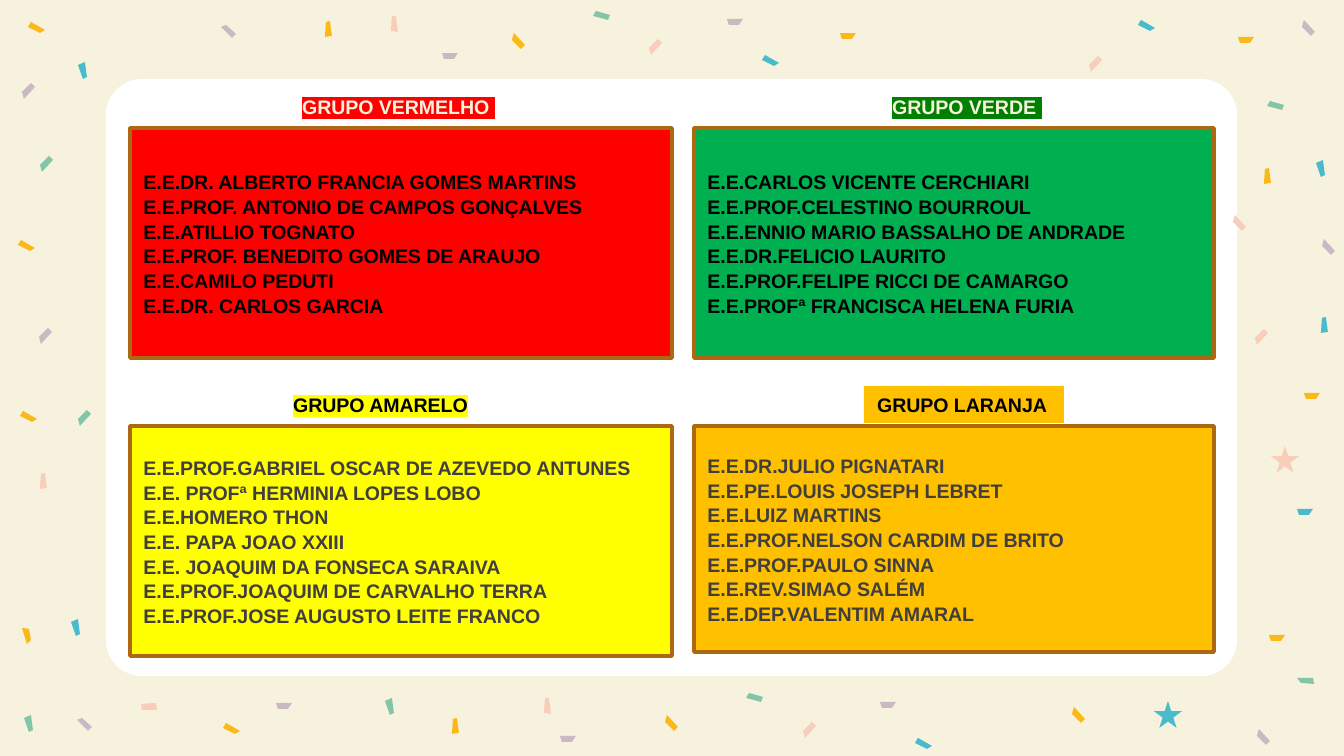
import pptx
import pptx.util
import pptx.dml.color
import pptx.enum.shapes
import pptx.enum.text
import pptx.oxml.ns
import lxml.etree

PX = 9144000 / 1344
SHAPE = pptx.enum.shapes.MSO_SHAPE
COLORS = {
    "cream": "F7F2DD", "white": "FFFFFF", "black": "000000", "gray": "413E3E",
    "brown": "AF6812", "red": "FF0000", "green": "00B050", "dark_green": "008000",
    "yellow": "FFFF00", "orange": "FFC000", "lilac": "CAB8C5", "pink": "F8CEBB",
    "gold": "FAB919", "mint": "85C5A7", "blue": "4ABACD",
}

CONFETTI = [
    ([(0, 0), (16, 0), (12, 6), (2, 6)], {
        "lilac": [(560, 736), (276, 703), (880, 702), (442, 53), (727, 19)],
        "gold": [(1269, 635), (1304, 393), (840, 33), (1238, 37)],
        "blue": [(1297, 509)]}),
    ([(0, 5), (12, 11), (17, 8), (3, 0)], {
        "gold": [(223, 723), (20, 411), (18, 240), (28, 22)],
        "blue": [(915, 738), (762, 55), (1138, 20)]}),
    ([(9, 0), (0, 9), (2, 16), (13, 4)], {
        "lilac": [(39, 328), (22, 83)],
        "pink": [(803, 722), (1255, 329), (649, 39), (1089, 56)],
        "mint": [(78, 410), (40, 156)]}),
    ([(9, 16), (0, 7), (2, 0), (13, 12)], {
        "gold": [(665, 715), (1072, 707), (512, 33)],
        "lilac": [(1257, 729), (1322, 239), (1302, 20)],
        "pink": [(1233, 215)]}),
    ([(15, 9), (5, 0), (0, 2), (11, 13)], {"lilac": [(77, 718), (221, 25)]}),
    ([(0, 3), (5, 17), (9, 15), (7, 0)], {
        "mint": [(24, 715), (385, 698)],
        "blue": [(71, 619), (78, 62), (1316, 160)]}),
    ([(9, 12), (7, 1), (0, 0), (5, 16)], {"gold": [(22, 628)]}),
    ([(0, 15), (1, 0), (5, 0), (7, 16)], {"pink": [(544, 698), (391, 16)]}),
    ([(7, 15), (5, 0), (1, 1), (0, 16)], {
        "gold": [(452, 718), (325, 21), (1264, 168)],
        "pink": [(40, 473)], "blue": [(1321, 317)]}),
    ([(3, 0), (17, 4), (15, 9), (0, 5)], {
        "mint": [(746, 693), (593, 11), (1267, 101)]}),
    ([(15, 0), (0, 1), (1, 7), (16, 7)], {"pink": [(141, 703)]}),
    ([(17, 6), (4, 5), (0, 0), (16, 0)], {"mint": [(1297, 678)]}),
]
STARS = [(1154, 701, "blue"), (1271, 446, "pink")]

GROUPS = [
    {"box": (130, 128, 542, 230), "fill": "red", "color": "black",
     "heading": {"text": "GRUPO VERMELHO ", "dx": 159, "width": 222,
                 "color": "cream", "highlight": "red"},
     "schools": ["E.E.DR. ALBERTO FRANCIA GOMES MARTINS",
                 "E.E.PROF. ANTONIO DE CAMPOS GONÇALVES",
                 "E.E.ATILLIO TOGNATO",
                 "E.E.PROF. BENEDITO GOMES DE ARAUJO",
                 "E.E.CAMILO PEDUTI",
                 "E.E.DR. CARLOS GARCIA"]},
    {"box": (694, 128, 520, 230), "fill": "green", "color": "black",
     "heading": {"text": "GRUPO VERDE ", "dx": 185, "width": 226,
                 "color": "cream", "highlight": "dark_green"},
     "schools": ["E.E.CARLOS VICENTE CERCHIARI",
                 "E.E.PROF.CELESTINO BOURROUL",
                 "E.E.ENNIO MARIO BASSALHO DE ANDRADE",
                 "E.E.DR.FELICIO LAURITO",
                 "E.E.PROF.FELIPE RICCI DE CAMARGO",
                 "E.E.PROFª FRANCISCA HELENA FURIA"]},
    {"box": (130, 426, 542, 230), "fill": "yellow", "color": "gray",
     "heading": {"text": "GRUPO AMARELO", "dx": 150, "width": 206,
                 "color": "black", "highlight": "yellow"},
     "schools": ["E.E.PROF.GABRIEL OSCAR DE AZEVEDO ANTUNES",
                 "E.E. PROFª HERMINIA LOPES LOBO",
                 "E.E.HOMERO THON",
                 "E.E. PAPA JOAO XXIII",
                 "E.E. JOAQUIM DA FONSECA SARAIVA",
                 "E.E.PROF.JOAQUIM DE CARVALHO TERRA",
                 "E.E.PROF.JOSE AUGUSTO LEITE FRANCO"]},
    {"box": (694, 426, 520, 226), "fill": "orange", "color": "gray",
     "heading": {"text": "GRUPO LARANJA", "dx": 170, "width": 200,
                 "color": "black", "fill": "orange"},
     "schools": ["E.E.DR.JULIO PIGNATARI",
                 "E.E.PE.LOUIS JOSEPH LEBRET",
                 "E.E.LUIZ MARTINS",
                 "E.E.PROF.NELSON CARDIM DE BRITO",
                 "E.E.PROF.PAULO SINNA",
                 "E.E.REV.SIMAO SALÉM",
                 "E.E.DEP.VALENTIM AMARAL"]},
]


def emu(*lengths):
    """Turn px lengths into EMU."""
    return [round(n * PX) for n in lengths]


def rgb(name):
    """Look up a named colour."""
    return pptx.dml.color.RGBColor.from_string(COLORS[name])


def paint(sp, fill, line=None):
    """Fill a shape and give it a 2 pt outline or none."""
    sp.fill.solid()
    sp.fill.fore_color.rgb = rgb(fill)
    if line:
        sp.line.color.rgb = rgb(line)
        sp.line.width = pptx.util.Pt(2)
    else:
        sp.line.fill.background()


def add_preset(s, kind, box, fill):
    """Add a flat preset shape."""
    sp = s.shapes.add_shape(kind, *emu(*box))
    sp.shadow.inherit = False
    paint(sp, fill)
    return sp


def write(tf, text, color, size=10.5, highlight=None, spacing=1.0,
          align=pptx.enum.text.PP_ALIGN.LEFT):
    """Write bold lines of text without bullets into a frame."""
    qn = pptx.oxml.ns.qn
    tf.word_wrap = True
    tf.auto_size = pptx.enum.text.MSO_AUTO_SIZE.NONE
    tf.vertical_anchor = pptx.enum.text.MSO_ANCHOR.MIDDLE
    for i, line in enumerate(text.split("\n")):
        p = tf.add_paragraph() if i else tf.paragraphs[0]
        p.alignment = align
        p.line_spacing = spacing
        p.space_before = p.space_after = pptx.util.Pt(0)
        pPr = p._p.get_or_add_pPr()
        pPr.set("marL", "0")
        pPr.set("indent", "0")
        lxml.etree.SubElement(pPr, qn("a:buNone"))
        r = p.add_run()
        r.text = line
        r.font.name = "Arial"
        r.font.size = pptx.util.Pt(size)
        r.font.bold = True
        r.font.color.rgb = rgb(color)
        if highlight:
            mark = lxml.etree.Element(qn("a:highlight"))
            lxml.etree.SubElement(mark, qn("a:srgbClr"), val=COLORS[highlight])
            r._r.find(qn("a:rPr")).find(qn("a:solidFill")).addnext(mark)


def add_confetti(s):
    """Scatter the paper pieces and stars."""
    for outline, places in CONFETTI:
        for color, corners in places.items():
            for x, y in corners:
                points = [(x + dx, y + dy) for dx, dy in outline]
                builder = s.shapes.build_freeform(*points[0], scale=PX)
                builder.add_line_segments(points[1:], close=True)
                sp = builder.convert_to_shape()
                sp.shadow.inherit = False
                paint(sp, color)
    for x, y, color in STARS:
        add_preset(s, SHAPE.STAR_5_POINT, (x, y, 28, 27), color)


def add_group(s, body, box, fill, color, heading, schools):
    """Place a school list in its box with the heading above it."""
    x, y, w, h = box
    body.left, body.top, body.width, body.height = emu(x, y, w, h)
    body.element.getparent().append(body.element)
    paint(body, fill, "brown")
    write(body.text_frame, "\n".join(schools), color, spacing=1.05,
          align=pptx.enum.text.PP_ALIGN.JUSTIFY)
    label_box = (x + heading["dx"], y - 40, heading["width"], 37)
    if "fill" in heading:
        label = add_preset(s, SHAPE.RECTANGLE, label_box, heading["fill"])
    else:
        label = s.shapes.add_textbox(*emu(*label_box))
    write(label.text_frame, heading["text"], heading["color"],
          highlight=heading.get("highlight"))


def main():
    """Build and save the slide."""
    prs = pptx.Presentation()
    prs.slide_width, prs.slide_height = emu(1344, 756)
    s = prs.slides.add_slide(prs.slide_layouts.get_by_name("Comparison"))
    s.background.fill.solid()
    s.background.fill.fore_color.rgb = rgb("cream")
    title, *bodies = list(s.placeholders)
    title.element.getparent().remove(title.element)
    panel = add_preset(s, SHAPE.ROUNDED_RECTANGLE, (106, 79, 1131, 597), "white")
    panel.adjustments[0] = 0.06
    add_confetti(s)
    for body, group in zip(bodies, GROUPS):
        add_group(s, body, **group)
    prs.save("out.pptx")


if __name__ == "__main__":
    main()
